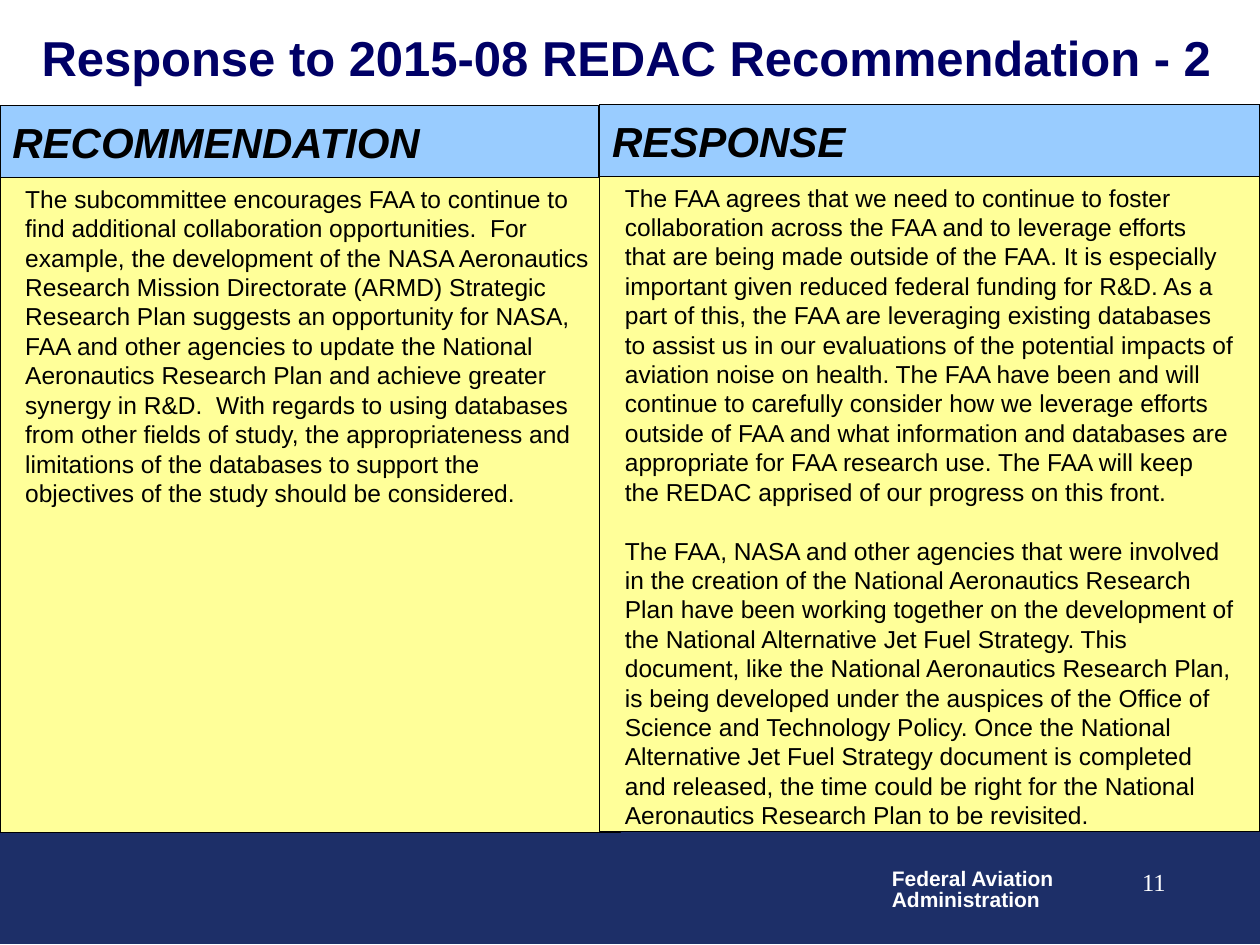
from pptx import Presentation
from pptx.dml.color import RGBColor
from pptx.enum.shapes import MSO_SHAPE
from pptx.enum.text import MSO_ANCHOR, MSO_AUTO_SIZE, PP_ALIGN
from pptx.util import Inches, Pt

TITLE = "Response to 2015-08 REDAC Recommendation - 2"
AGENCY = ["Federal Aviation", "Administration"]
PAGE_NUMBER = "11"
RECOMMENDATION = [
    "The subcommittee encourages FAA to continue to find additional collaboration "
    "opportunities.\u00a0 For example, the development of the NASA Aeronautics Research "
    "Mission Directorate (ARMD) Strategic Research Plan suggests an opportunity for NASA, "
    "FAA and other agencies to update the National Aeronautics Research Plan and achieve "
    "greater synergy in R&D.\u00a0 With regards to using databases from other fields of "
    "study, the appropriateness and limitations of the databases to support the objectives "
    "of the study should be considered.",
]
RESPONSE = [
    "The FAA agrees that we need to continue to foster collaboration across the FAA and to "
    "leverage efforts that are being made outside of the FAA. It is especially important "
    "given reduced federal funding for R&D. As a part of this, the FAA are leveraging "
    "existing databases to assist us in our evaluations of the potential impacts of "
    "aviation noise on health. The FAA have been and will continue to carefully consider "
    "how we leverage efforts outside of FAA and what information and databases are "
    "appropriate for FAA research use. The FAA will keep the REDAC apprised of our progress "
    "on this front.",
    "The FAA, NASA and other agencies that were involved in the creation of the National "
    "Aeronautics Research Plan have been working together on the development of the "
    "National Alternative Jet Fuel Strategy. This document, like the National Aeronautics "
    "Research Plan, is being developed under the auspices of the Office of Science and "
    "Technology Policy. Once the National Alternative Jet Fuel Strategy document is "
    "completed and released, the time could be right for the National Aeronautics Research "
    "Plan to be revisited.",
]
COLUMNS = [
    ("RECOMMENDATION", RECOMMENDATION, 0, 0.84, 4.75, 4.92),
    ("RESPONSE", RESPONSE, 4.76, 0.83, 5.24, 5.24),
]
HEADER_HEIGHT, BODY_HEIGHT = 0.57, 5.2
NAVY, YELLOW, BLUE, BLACK, WHITE = "1D2F68", "FFFF99", "99CCFF", "000000", "FFFFFF"


def color(value):
    return RGBColor.from_string(value)


def add_panel(page, place, fill, line):
    panel = page.shapes.add_shape(MSO_SHAPE.RECTANGLE, *map(Inches, place))
    panel.shadow.inherit = False
    panel.fill.solid()
    panel.fill.fore_color.rgb = color(fill)
    panel.line.color.rgb = color(line)
    panel.line.width = Pt(0.75)
    return panel


def write(box, lines, size, ink, font="Arial", bold=False, italic=False,
          align=PP_ALIGN.LEFT, anchor=MSO_ANCHOR.TOP, gap=0, spacing=None, side=0.1):
    frame = box.text_frame
    frame.word_wrap = True
    frame.auto_size = MSO_AUTO_SIZE.NONE
    frame.vertical_anchor = anchor
    frame.margin_left = frame.margin_right = Inches(side)
    for index, line in enumerate(lines):
        para = frame.add_paragraph() if index else frame.paragraphs[0]
        para.alignment = align
        para.line_spacing = spacing
        if index and gap:
            para.space_before = Pt(gap)
        span = para.add_run()
        span.text = line
        span.font.name = font
        span.font.size = Pt(size)
        span.font.bold = bold
        span.font.italic = italic
        span.font.color.rgb = color(ink)


def main():
    deck = Presentation()
    deck.slide_width, deck.slide_height = Inches(10), Inches(7.5)
    page = deck.slides.add_slide(deck.slide_layouts[5])

    title = page.shapes.title
    title.left, title.top, title.width, title.height = map(Inches, (0.23, 0.12, 9.64, 0.67))
    write(title, [TITLE], 28, "000066", bold=True, anchor=MSO_ANCHOR.MIDDLE)

    add_panel(page, (0, 6.6, 10, 0.89), NAVY, NAVY)
    agency = page.shapes.add_textbox(*map(Inches, (6.98, 6.85, 1.5, 0.44)))
    write(agency, AGENCY, 12, WHITE, bold=True, spacing=0.85)
    number = page.shapes.add_textbox(*map(Inches, (7.27, 6.83, 2.08, 0.5)))
    write(number, [PAGE_NUMBER], 14, WHITE, font="Times New Roman", align=PP_ALIGN.RIGHT)

    for heading, paragraphs, left, top, header_width, body_width in COLUMNS:
        body_place = (left, top + HEADER_HEIGHT, body_width, BODY_HEIGHT)
        body = add_panel(page, body_place, YELLOW, BLACK)
        write(body, paragraphs, 14, BLACK, gap=16.8, side=0.2)
        header = add_panel(page, (left, top, header_width, HEADER_HEIGHT), BLUE, BLACK)
        write(header, [heading], 24, BLACK, bold=True, italic=True, anchor=MSO_ANCHOR.MIDDLE)

    deck.save("out.pptx")


if __name__ == "__main__":
    main()
